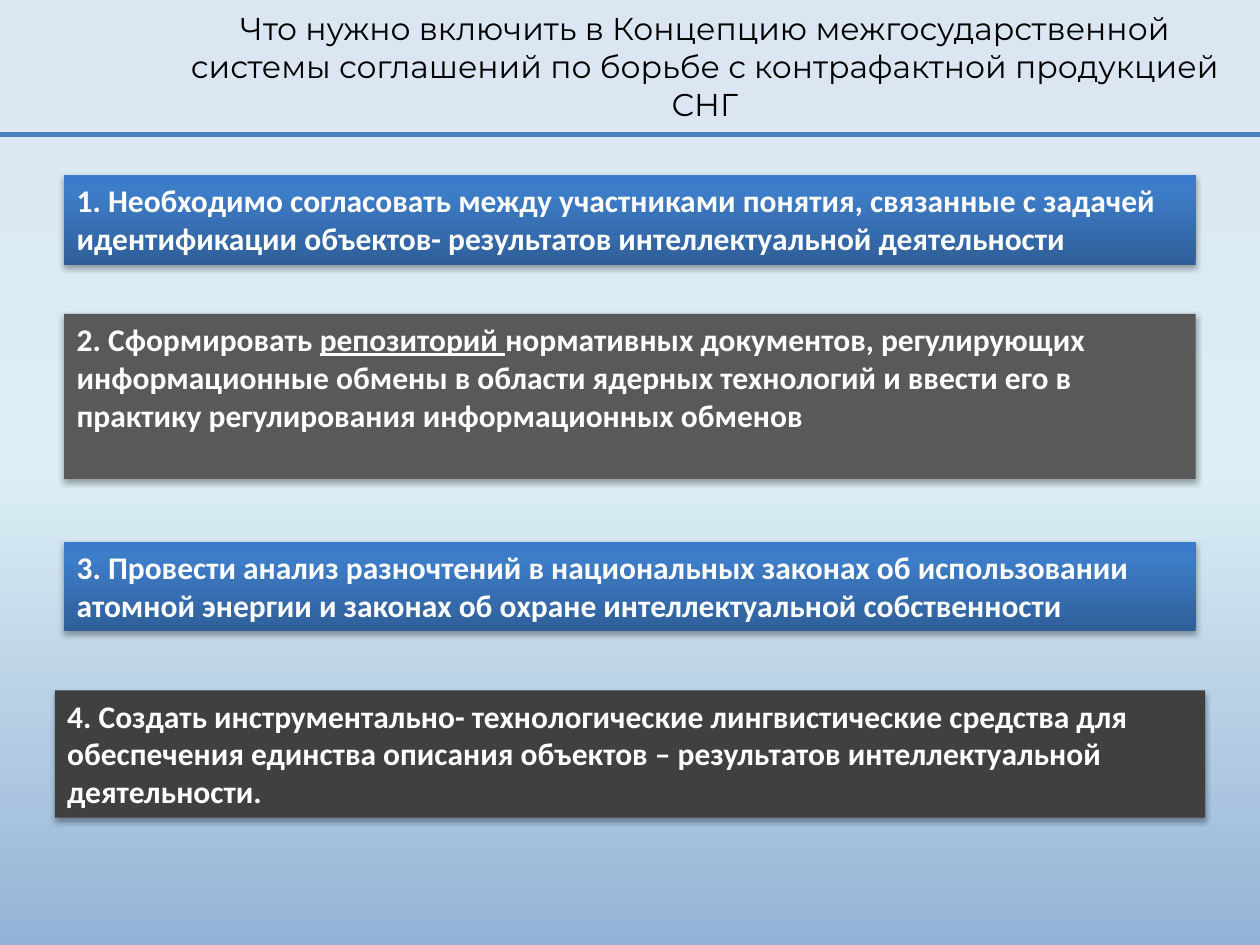
from lxml import etree
from pptx import Presentation
from pptx.dml.color import RGBColor
from pptx.enum.shapes import MSO_CONNECTOR, MSO_SHAPE
from pptx.enum.text import MSO_ANCHOR, PP_ALIGN
from pptx.oxml import parse_xml
from pptx.oxml.ns import nsdecls, qn
from pptx.util import Inches, Pt

RECTANGLE = MSO_SHAPE.RECTANGLE
STRAIGHT = MSO_CONNECTOR.STRAIGHT
TOP, MIDDLE = MSO_ANCHOR.TOP, MSO_ANCHOR.MIDDLE
LEFT, CENTER = PP_ALIGN.LEFT, PP_ALIGN.CENTER

BLACK = RGBColor(0x00, 0x00, 0x00)
WHITE = RGBColor(0xFF, 0xFF, 0xFF)
RULE_BLUE = RGBColor(0x4B, 0x7E, 0xBC)
GRAY = RGBColor(0x59, 0x59, 0x59)
DARK_GRAY = RGBColor(0x40, 0x40, 0x40)
SKY_STOPS = [
    (0, RGBColor(0xDC, 0xE6, 0xF2)),
    (50, RGBColor(0xDB, 0xEE, 0xF4)),
    (100, RGBColor(0x95, 0xB3, 0xD7)),
]
BLUE_STOPS = [
    (0, RGBColor(0x2F, 0x5F, 0x99)),
    (80, RGBColor(0x3D, 0x7C, 0xC7)),
    (100, RGBColor(0x3A, 0x7C, 0xCB)),
]

TITLE_FONT = {"name": "Montserrat", "size": Pt(18)}
POINT_FONT = {"name": "Calibri", "size": Pt(18), "bold": True}


def set_gradient(fill, stops, angle, stop_parent):
    """Fill with any number of stops; the angle runs counter-clockwise."""
    fill.gradient()
    fill.gradient_angle = angle
    stop_list = next(stop_parent.iter(qn("a:gsLst")))
    for old_stop in list(stop_list):
        stop_list.remove(old_stop)
    for percent, color in stops:
        stop = etree.SubElement(stop_list, qn("a:gs"), pos=str(percent * 1000))
        etree.SubElement(stop, qn("a:srgbClr"), val=str(color))


def add_run(paragraph, text, font_format, color):
    run = paragraph.add_run()
    run.text = text
    for key, value in font_format.items():
        setattr(run.font, key, value)
    run.font.color.rgb = color
    return run


prs = Presentation()
prs.slide_width, prs.slide_height = Inches(10), Inches(7.5)
slide = prs.slides.add_slide(prs.slide_layouts[6])

# Background
set_gradient(slide.background.fill, SKY_STOPS, 270, slide.element)

# Rule under the title
rule = slide.shapes.add_connector(
    STRAIGHT, Inches(0), Inches(1.07), Inches(10), Inches(1.07))
rule.line.color.rgb = RULE_BLUE
rule.line.width = Pt(3)
etree.SubElement(rule._element.spPr, qn("a:effectLst"))

# Title
title = slide.shapes.add_textbox(
    Inches(1.38), Inches(0.21), Inches(8.43), Inches(0.63)).text_frame
title.word_wrap = True
title.vertical_anchor = MIDDLE
title.paragraphs[0].alignment = CENTER
add_run(
    title.paragraphs[0],
    "Что нужно включить в Концепцию межгосударственной системы соглашений "
    "по борьбе с контрафактной продукцией СНГ",
    TITLE_FONT, BLACK)

# Numbered points: top, width, height, solid colour (None for blue gradient),
# and text pieces with their underline
points = [
    (1.39, 8.98, 0.71, None, [
        ("1. Необходимо согласовать между участниками понятия, связанные с "
         "задачей идентификации объектов- результатов интеллектуальной "
         "деятельности", False)]),
    (2.49, 8.98, 1.31, GRAY, [
        ("2. Сформировать ", False),
        ("репозиторий ", True),
        ("нормативных документов, регулирующих информационные обмены в "
         "области ядерных технологий и ввести его в практику регулирования "
         "информационных обменов", False)]),
    (4.3, 8.98, 0.71, None, [
        ("3. Провести анализ разночтений в национальных законах об "
         "использовании атомной энергии и законах об охране "
         "интеллектуальной собственности", False)]),
    (5.48, 9.13, 1.01, DARK_GRAY, [
        ("4. Создать инструментально- технологические лингвистические "
         "средства для обеспечения единства описания объектов – "
         "результатов интеллектуальной деятельности.", False)]),
]
for top, width, height, color, pieces in points:
    point = slide.shapes.add_shape(
        RECTANGLE, Inches((10 - width) / 2), Inches(top),
        Inches(width), Inches(height))
    if color is None:
        set_gradient(point.fill, BLUE_STOPS, 90, point._element)
    else:
        point.fill.solid()
        point.fill.fore_color.rgb = color
    point.line.fill.background()

    # Soft shadow below the box
    point.shadow.inherit = False
    point._element.spPr.find(qn("a:effectLst")).append(parse_xml(
        f'<a:outerShdw {nsdecls("a")} blurRad="{Pt(3.1)}" dist="{Pt(1.8)}" '
        'dir="5400000" rotWithShape="0"><a:srgbClr val="000000">'
        '<a:alpha val="35000"/></a:srgbClr></a:outerShdw>'))

    frame = point.text_frame
    frame.word_wrap = True
    frame.vertical_anchor = TOP
    frame.paragraphs[0].alignment = LEFT
    for text, underlined in pieces:
        run = add_run(frame.paragraphs[0], text, POINT_FONT, WHITE)
        run.font.underline = underlined

prs.save("out.pptx")
